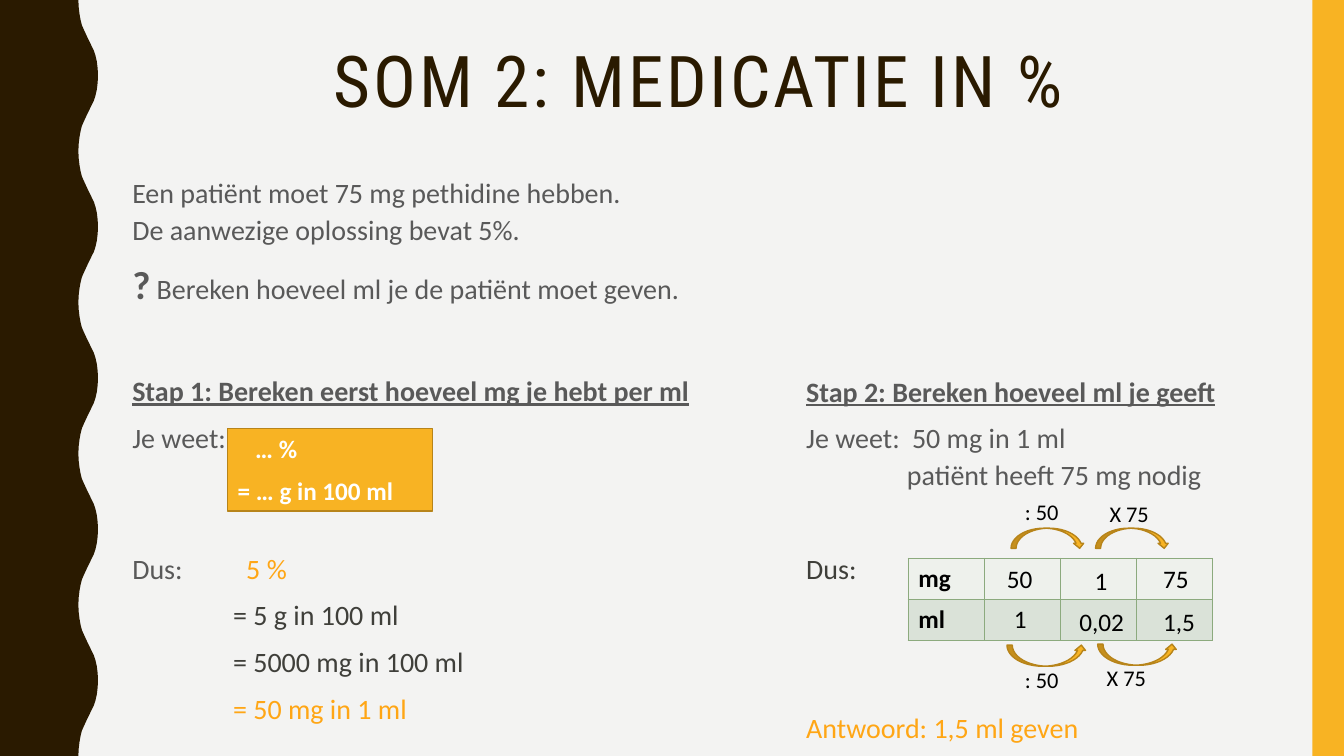
import pptx
import pptx.util
import pptx.dml.color
import pptx.enum.shapes
import pptx.enum.text
import pptx.oxml
import pptx.oxml.ns

Pt = pptx.util.Pt
RGBColor = pptx.dml.color.RGBColor
MSO_SHAPE = pptx.enum.shapes.MSO_SHAPE
PP_ALIGN = pptx.enum.text.PP_ALIGN

PAPER = RGBColor(0xF3, 0xF3, 0xF2)
BROWN = RGBColor(0x2A, 0x1A, 0x00)
YELLOW = RGBColor(0xF8, 0xB3, 0x23)
OCHRE = RGBColor(0xB7, 0x84, 0x1A)
ORANGE = RGBColor(0xFF, 0xA6, 0x15)
GREY = RGBColor(0x59, 0x59, 0x59)
DARK = RGBColor(0x3F, 0x3F, 0x3A)
BLACK = RGBColor(0, 0, 0)
WHITE = RGBColor(0xFF, 0xFF, 0xFF)
ROW_FILLS = [RGBColor(0xEE, 0xF1, 0xEC), RGBColor(0xDA, 0xE2, 0xD8)]
GRID_HEX = "8CAA7E"
A_NS = pptx.oxml.ns.nsdecls("a")


def write(frame, text, font="Calibri", size=20, color=GREY, bold=False, underline=False,
          before=0, spacing=1.0, align=PP_ALIGN.LEFT, tab=None, same_line=False):
    """Add a paragraph, or a run that continues the last one."""
    paragraph = frame.paragraphs[-1]
    if not same_line:
        if paragraph.runs:
            paragraph = frame.add_paragraph()
        paragraph.alignment = align
        paragraph.line_spacing = spacing
        paragraph.space_before = Pt(before)
        if tab:
            paragraph._p.get_or_add_pPr().append(pptx.oxml.parse_xml(
                f'<a:tabLst {A_NS}><a:tab pos="{Pt(tab)}" algn="l"/></a:tabLst>'))
    run = paragraph.add_run()
    run.text = text
    run.font.name = font
    run.font.size = Pt(size)
    run.font.bold = bold
    run.font.underline = underline
    run.font.color.rgb = color
    return run


def paint(shape, fill, line=None):
    shape.shadow.inherit = False
    shape.fill.solid()
    shape.fill.fore_color.rgb = fill
    if line is None:
        shape.line.fill.background()
    else:
        shape.line.color.rgb = line
        shape.line.width = Pt(1)


deck = pptx.Presentation()
deck.slide_width, deck.slide_height = Pt(960), Pt(540)
slide = deck.slides.add_slide(deck.slide_layouts[5])
shapes = slide.shapes
slide.background.fill.solid()
slide.background.fill.fore_color.rgb = PAPER

# Wavy band on the left: one half wave, mirrored and repeated
half_wave = [(56, 0), (56.2, 5), (56.8, 10), (57.6, 14.4), (58.5, 18), (59.8, 21),
             (61.2, 24), (62.6, 27), (64.1, 30), (65.5, 33), (67, 36), (68.2, 39.6),
             (69.2, 44), (69.8, 49), (70, 54)]
full_wave = half_wave + [(x, 108 - y) for x, y in reversed(half_wave[:-1])]
edge = [(Pt(x), Pt(y + 108 * period)) for period in range(5) for x, y in full_wave]
outline = shapes.build_freeform(0, 0)
outline.add_line_segments(edge + [(0, Pt(540))], close=True)
paint(outline.convert_to_shape(), BROWN)

# Bar on the right
paint(shapes.add_shape(MSO_SHAPE.RECTANGLE, Pt(937.5), 0, Pt(22.5), Pt(540)), YELLOW)

# Title
title = shapes.title
title.left, title.top, title.width, title.height = Pt(98.6), Pt(1.4), Pt(801.4), Pt(117.4)
title.text_frame.vertical_anchor = pptx.enum.text.MSO_ANCHOR.MIDDLE
title.text_frame.word_wrap = True
heading = write(title.text_frame, "SOM 2: MEDICATIE IN %", font="Roboto Condensed", size=51,
                color=BROWN, spacing=0.9, align=PP_ALIGN.CENTER)
heading.font._element.set("spc", "200")

# Question and step 1
step1 = shapes.add_textbox(Pt(87.4), Pt(119.2), Pt(480), Pt(414)).text_frame
step1.word_wrap = True
write(step1, "Een patiënt moet 75 mg pethidine hebben.", spacing=1.1)
write(step1, "De aanwezige oplossing bevat 5%.", spacing=1.1)
write(step1, "?", size=28, bold=True, before=7, spacing=1.1)
write(step1, " Bereken hoeveel ml je de patiënt moet geven.", same_line=True)
write(step1, "Stap 1: Bereken eerst hoeveel mg je hebt per ml", bold=True, underline=True,
      before=45.2, spacing=1.1)
write(step1, "Je weet:", before=7, spacing=1.1)
write(step1, "Dus:", before=66.7, spacing=1.1, tab=81.4)
write(step1, "\t5 %", color=ORANGE, same_line=True)
for result, color in [("= 5 g in 100 ml", DARK), ("= 5000 mg in 100 ml", DARK),
                      ("= 50 mg in 1 ml", ORANGE)]:
    write(step1, "\t" + result, color=color, before=7, spacing=1.1, tab=72)

# Step 2
step2 = shapes.add_textbox(Pt(568.8), Pt(261.4), Pt(368), Pt(274)).text_frame
step2.word_wrap = True
write(step2, "Stap 2: Bereken hoeveel ml je geeft", bold=True, underline=True, spacing=1.1)
write(step2, "Je weet:\t50 mg in 1 ml", before=7, spacing=1.1, tab=75.6)
write(step2, "\tpatiënt heeft 75 mg nodig", spacing=1.1, tab=72)
write(step2, "Dus:", color=DARK, before=40.5, spacing=1.1)
write(step2, "Antwoord: 1,5 ml geven", color=ORANGE, before=87, spacing=1.1)

# Rule of percentages
rule = shapes.add_shape(MSO_SHAPE.RECTANGLE, Pt(162.7), Pt(306), Pt(146.2), Pt(59))
paint(rule, YELLOW, OCHRE)
rule.text_frame.word_wrap = False
rule.text_frame.vertical_anchor = pptx.enum.text.MSO_ANCHOR.TOP
write(rule.text_frame, "\t… %", size=18, color=WHITE, bold=True, tab=12.5)
write(rule.text_frame, "= … g in 100 ml", size=18, color=WHITE, bold=True, before=8.5)

# Ratio table: only the units stand in the grid
ratio_table = shapes.add_table(2, 4, Pt(648.7), Pt(398.9), Pt(217.6), Pt(58.6)).table
for column in ratio_table.columns:
    column.width = Pt(54.4)
for r, unit in enumerate(["mg", "ml"]):
    ratio_table.rows[r].height = Pt(29.3)
    write(ratio_table.cell(r, 0).text_frame, unit, size=18, color=BLACK, bold=True)
    for cell in ratio_table.rows[r].cells:
        properties = cell._tc.get_or_add_tcPr()
        for side in ("lnL", "lnR", "lnT", "lnB"):
            properties.append(pptx.oxml.parse_xml(
                f'<a:{side} {A_NS} w="12700"><a:solidFill><a:srgbClr val="{GRID_HEX}"/>'
                f'</a:solidFill></a:{side}>'))
        cell.fill.solid()
        cell.fill.fore_color.rgb = ROW_FILLS[r]

# Calculation arrows above and below the table
DOWN, UP = MSO_SHAPE.CURVED_DOWN_ARROW, MSO_SHAPE.CURVED_UP_ARROW
for kind, left, top, width, height in [
    (DOWN, 722.2, 377.3, 52.6, 14.4), (DOWN, 782.6, 377.3, 52.6, 14.4),
    (UP, 719.3, 460.8, 56.9, 15.1), (UP, 784.1, 460.1, 56.9, 15.1),
]:
    paint(shapes.add_shape(kind, Pt(left), Pt(top), Pt(width), Pt(height)), YELLOW, OCHRE)

# Factors beside the arrows, and the amounts laid over the table
for text, size, left, top, width in [
    (": 50", 16, 725, 352.1, 60.5), ("X 75", 16, 785.5, 353.5, 60.5),
    (": 50", 16, 725, 472.3, 60.5), ("X 75", 16, 783.4, 470.9, 60.5),
    ("50", 18, 712.1, 398.9, 37.4), ("1", 18, 774.7, 400.3, 37.4),
    ("75", 18, 823.7, 398.9, 37.4), ("1", 18, 717.1, 427.7, 37.4),
    ("0,02", 18, 763.9, 429.8, 48.2), ("1,5", 18, 823.7, 429.8, 37.4),
]:
    amount = shapes.add_textbox(Pt(left), Pt(top), Pt(width), Pt(size + 10.8)).text_frame
    amount.word_wrap = True
    write(amount, text, size=size, color=BLACK)

deck.save("out.pptx")
